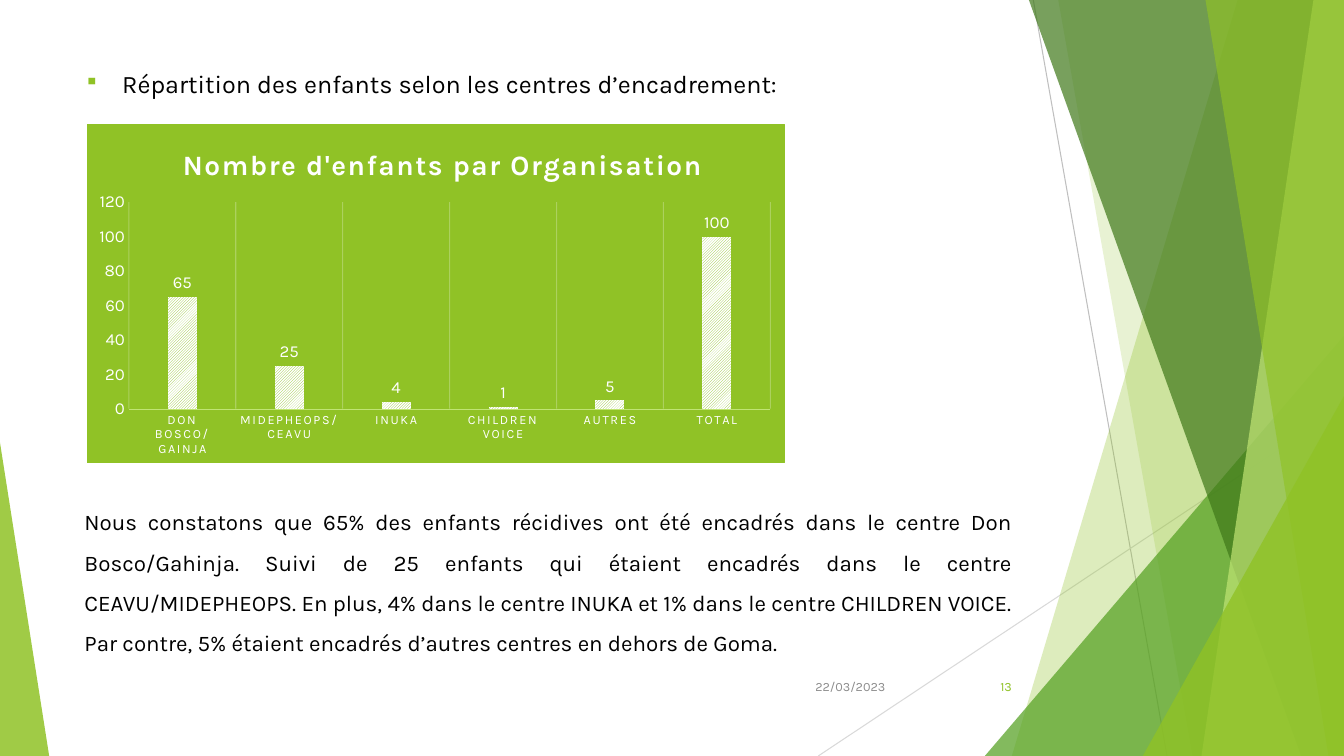
"""Build the slide on how the children are spread over the care centres."""
from dataclasses import dataclass

from lxml.etree import SubElement
from pptx import Presentation
from pptx.chart.data import CategoryChartData
from pptx.dml.color import RGBColor
from pptx.enum.chart import XL_CHART_TYPE, XL_LABEL_POSITION, XL_TICK_MARK
from pptx.enum.dml import MSO_PATTERN
from pptx.enum.shapes import MSO_CONNECTOR, MSO_SHAPE
from pptx.enum.text import MSO_ANCHOR, PP_ALIGN
from pptx.oxml import parse_xml
from pptx.oxml.ns import nsdecls, qn
from pptx.util import Cm, Pt


@dataclass(frozen=True)
class Theme:
    """Colours, font and type sizes of the slide."""
    font: str = "Karla"
    lime: str = "90C226"
    pale: str = "C0E474"
    green: str = "54A021"
    forest: str = "3F7819"
    light_line: str = "D9D9D9"
    grey_line: str = "BFBFBF"
    grey_text: str = "8C8C8C"
    black: str = "000000"
    white: str = "FFFFFF"
    title: int = 20
    heading: int = 18
    body: int = 16
    value: int = 12
    chart: int = 10
    small: int = 9


THEME = Theme()
WIDTH, HEIGHT = 33.87, 19.05
CENTRES = {"DON BOSCO/GAINJA": 65, "MIDEPHEOPS/CEAVU": 25, "INUKA": 4,
           "CHILDREN VOICE": 1, "AUTRES": 5, "TOTAL": 100}
HEADING = "Répartition des enfants selon les centres d’encadrement:"
FINDINGS = (
    "Nous constatons que 65% des enfants récidives ont été encadrés dans le centre "
    "Don Bosco/Gahinja. Suivi de 25 enfants qui étaient encadrés dans le centre "
    "CEAVU/MIDEPHEOPS. En plus, 4% dans le centre INUKA et 1% dans le centre "
    "CHILDREN VOICE. Par contre, 5% étaient encadrés d’autres centres en dehors de Goma."
)


def style_font(font, size, color, bold=False):
    """Apply the theme font with a size and colour."""
    font.name, font.size, font.bold = THEME.font, Pt(size), bold
    font.color.rgb = RGBColor.from_string(color)


def set_alpha(properties, percent):
    """Make the first solid colour in the properties partly transparent."""
    color = properties.find(".//" + qn("a:srgbClr"))
    SubElement(color, qn("a:alpha"), val=str(percent * 1000))


def fill_shape(shape, color, opacity):
    """Give a decorative shape a translucent fill without outline or shadow."""
    shape.shadow.inherit = False
    shape.fill.solid()
    shape.fill.fore_color.rgb = RGBColor.from_string(color)
    shape.line.fill.background()
    set_alpha(shape.element.spPr, opacity)


def add_ray(slide, start, end, color):
    """Draw a thin decorative line."""
    ray = slide.shapes.add_connector(
        MSO_CONNECTOR.STRAIGHT, *[Cm(length) for length in start + end])
    ray.line.color.rgb = RGBColor.from_string(color)
    ray.line.width = Pt(0.75)
    SubElement(ray.element.spPr, qn("a:effectLst"))


def add_panel(slide, top_left, bottom_left, color, opacity):
    """Draw a full-height panel with a slanted left edge."""
    outline = slide.shapes.build_freeform(Cm(top_left), Cm(0))
    corners = [(WIDTH, 0), (WIDTH, HEIGHT), (bottom_left, HEIGHT)]
    outline.add_line_segments([(Cm(x), Cm(y)) for x, y in corners])
    fill_shape(outline.convert_to_shape(), color, opacity)


def add_corner(slide, left, top, width, apex, color, opacity):
    """Draw a right triangle standing on the bottom edge."""
    corner = slide.shapes.add_shape(
        MSO_SHAPE.ISOSCELES_TRIANGLE, Cm(left), Cm(top), Cm(width), Cm(HEIGHT - top))
    corner.adjustments[0] = apex
    fill_shape(corner, color, opacity)


def add_text(slide, box, text, size, color, align=PP_ALIGN.LEFT,
             anchor=MSO_ANCHOR.TOP, spacing=1.0):
    """Add a one-paragraph text box and return its paragraph."""
    frame = slide.shapes.add_textbox(*[Cm(length) for length in box]).text_frame
    frame.word_wrap = True
    frame.vertical_anchor = anchor
    paragraph = frame.paragraphs[0]
    paragraph.text = text
    paragraph.alignment = align
    paragraph.line_spacing = spacing
    style_font(paragraph.font, size, color)
    return paragraph


def add_bullet(paragraph):
    """Put a small lime square before the paragraph."""
    properties = paragraph.font._element.getparent()
    properties.set("marL", str(Cm(0.95)))
    properties.set("indent", str(-Cm(0.95)))
    for markup in (f'<a:buClr {nsdecls("a")}><a:srgbClr val="{THEME.lime}"/></a:buClr>',
                   f'<a:buSzPct {nsdecls("a")} val="80000"/>',
                   f'<a:buChar {nsdecls("a")} char="▪"/>'):
        properties.find(qn("a:defRPr")).addprevious(parse_xml(markup))


def place(element, index, **fractions):
    """Set a manual layout on a chart part, in fractions of the chart."""
    for layout in element.findall(qn("c:layout")):
        element.remove(layout)
    layout = parse_xml(f'<c:layout {nsdecls("c")}><c:manualLayout/></c:layout>')
    if "w" in fractions:
        SubElement(layout[0], qn("c:layoutTarget"), val="inner")
    for side in "xy":
        SubElement(layout[0], qn(f"c:{side}Mode"), val="edge")
    for side, fraction in fractions.items():
        SubElement(layout[0], qn(f"c:{side}"), val=str(fraction))
    element.insert(index, layout)


def style_axes(chart):
    """Style both axes and the vertical grid."""
    centres, counts = chart.category_axis, chart.value_axis
    for axis, size in ((centres, THEME.small), (counts, THEME.value)):
        axis.major_tick_mark = axis.minor_tick_mark = XL_TICK_MARK.NONE
        style_font(axis.tick_labels.font, size, THEME.white)
    centres.format.line.color.rgb = RGBColor.from_string(THEME.pale)
    centres.format.line.width = Pt(0.25)
    centres.has_major_gridlines = True
    grid = centres.major_gridlines.format.line
    grid.color.rgb = RGBColor.from_string(THEME.white)
    grid.width = Pt(0.75)
    set_alpha(chart.element.find(".//" + qn("c:majorGridlines")), 25)
    counts.has_major_gridlines = False
    counts.minimum_scale, counts.maximum_scale, counts.major_unit = 0, 120, 20
    counts.format.line.fill.background()


def style_columns(chart):
    """Give the columns a striped fill and value labels."""
    plot = chart.plots[0]
    plot.gap_width, plot.overlap, plot.vary_by_categories = 269, -20, False
    stripes = plot.series[0].format.fill
    stripes.patterned()
    stripes.pattern = MSO_PATTERN.LIGHT_UPWARD_DIAGONAL
    stripes.fore_color.rgb = RGBColor.from_string(THEME.lime)
    stripes.back_color.rgb = RGBColor.from_string(THEME.white)
    labels = plot.series[0].data_labels
    labels.show_value = True
    labels.position = XL_LABEL_POSITION.OUTSIDE_END
    style_font(labels.font, THEME.value, THEME.white)


def add_centre_chart(slide):
    """Add the column chart of children per organisation."""
    data = CategoryChartData()
    data.categories = list(CENTRES)
    data.add_series("Series 1", list(CENTRES.values()))
    chart = slide.shapes.add_chart(XL_CHART_TYPE.COLUMN_CLUSTERED, Cm(2.18), Cm(3.12),
                                   Cm(17.6), Cm(8.56), data).chart
    style_font(chart.font, THEME.chart, THEME.black)
    chart.has_legend = False
    title = chart.chart_title.text_frame.paragraphs[0]
    title.text = "Nombre d'enfants par Organisation"
    style_font(title.font, THEME.title, THEME.white, bold=True)
    style_axes(chart)
    style_columns(chart)
    root = chart.element
    for part, spacing in (("title", 100), ("catAx", 120)):
        root.find(f".//{qn('c:' + part)}//{qn('a:defRPr')}").set("spc", str(spacing))
    place(root.find(".//" + qn("c:title")), 1, x=0.13, y=0.05)
    place(root.find(".//" + qn("c:plotArea")), 0, x=0.06, y=0.23, w=0.92, h=0.61)
    paint = f'<a:solidFill><a:srgbClr val="{THEME.lime}"/></a:solidFill>'
    root.find(qn("c:txPr")).addprevious(parse_xml(
        f'<c:spPr {nsdecls("c", "a")}>{paint}<a:ln w="{Pt(0.75)}">{paint}</a:ln></c:spPr>'))


def add_decoration(slide):
    """Draw the green facets along the edges."""
    add_ray(slide, (26.04, 0), (29.41, HEIGHT), THEME.grey_line)
    add_ray(slide, (WIDTH, 10.24), (20.62, HEIGHT), THEME.light_line)
    add_panel(slide, 31.19, 25.5, THEME.lime, 30)
    add_panel(slide, 26.67, 30.05, THEME.lime, 20)
    add_corner(slide, 24.82, 8.46, 9.05, 1, THEME.green, 72)
    add_panel(slide, 25.93, 32.79, THEME.forest, 70)
    add_panel(slide, 33.1, 30.28, THEME.pale, 70)
    add_panel(slide, 30.38, 33.48, THEME.lime, 65)
    add_corner(slide, 28.8, 9.98, 5.07, 1, THEME.lime, 80)
    add_corner(slide, 0, 11.15, 1.24, 0, THEME.lime, 85)


def main():
    """Build and save the slide."""
    deck = Presentation()
    deck.slide_width, deck.slide_height = Cm(WIDTH), Cm(HEIGHT)
    slide = deck.slides.add_slide(deck.slide_layouts[6])
    add_decoration(slide)
    add_bullet(add_text(slide, (1.88, 1.6, 23.88, 1.1), HEADING, THEME.heading, THEME.black))
    add_text(slide, (1.88, 12.35, 23.88, 4.4), FINDINGS, THEME.body, THEME.black,
             PP_ALIGN.JUSTIFY, spacing=1.5)
    add_centre_chart(slide)
    for left, width, text, color in ((23.85, 1.9, "13", THEME.lime),
                                     (20.02, 2.54, "22/03/2023", THEME.grey_text)):
        add_text(slide, (left, 16.79, width, 1.02), text, THEME.small, color,
                 PP_ALIGN.RIGHT, MSO_ANCHOR.MIDDLE)
    deck.save("out.pptx")


if __name__ == "__main__":
    main()
